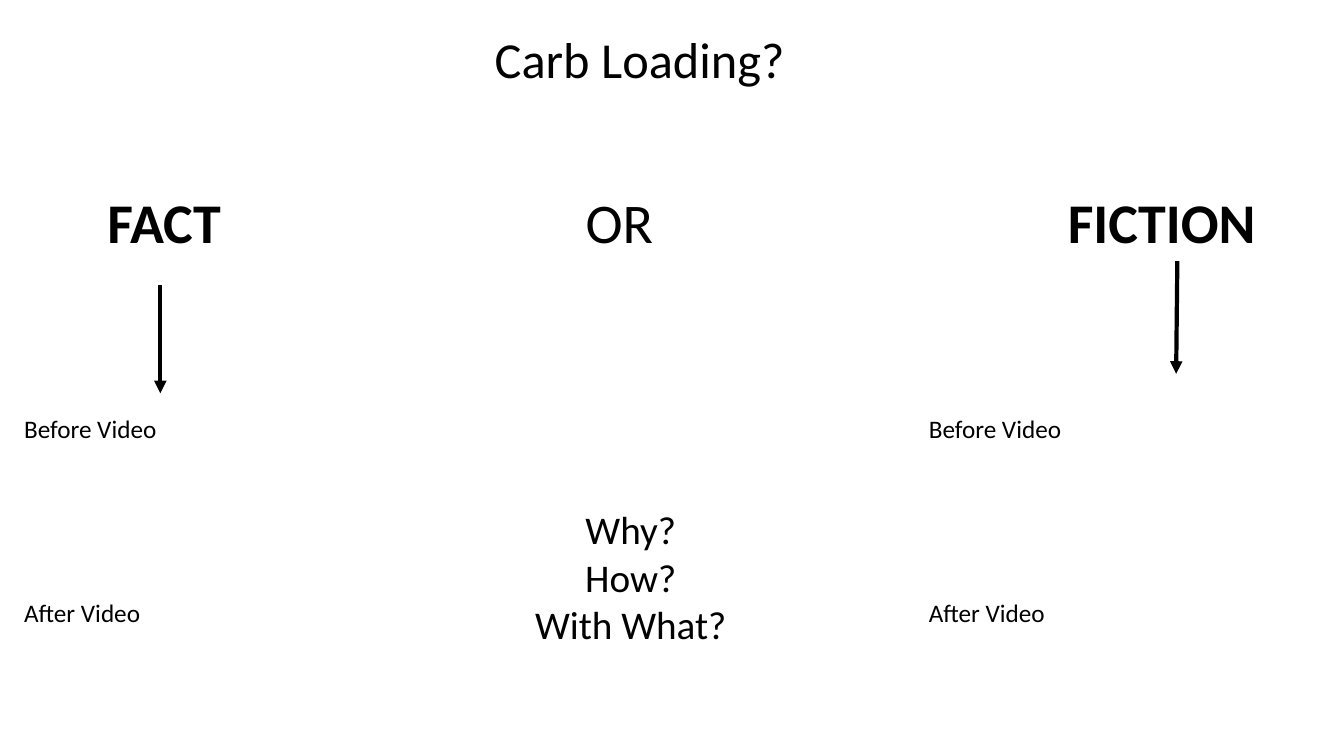
import pptx
import pptx.dml.color
import pptx.enum.shapes
import pptx.enum.text
import pptx.oxml.ns
import pptx.util
from lxml import etree
from pptx.util import Cm

BLACK = pptx.dml.color.RGBColor(0, 0, 0)
LEFT = pptx.enum.text.PP_ALIGN.LEFT
CENTER = pptx.enum.text.PP_ALIGN.CENTER
qn = pptx.oxml.ns.qn


def style(run, size, bold=False):
    font = run.font
    font.name = "Calibri"
    font.size = pptx.util.Pt(size)
    font.bold = bold
    font.color.rgb = BLACK


def add_box(slide, left, top, width, height):
    box = slide.shapes.add_textbox(Cm(left), Cm(top), Cm(width), Cm(height))
    frame = box.text_frame
    frame.word_wrap = True
    frame.auto_size = pptx.enum.text.MSO_AUTO_SIZE.SHAPE_TO_FIT_TEXT
    return frame


def add_lines(slide, place, lines, size, align=LEFT, gap=0):
    """Write one paragraph per line, with gap points between them."""
    frame = add_box(slide, *place)
    frame.text = "\n".join(lines)
    for index, para in enumerate(frame.paragraphs):
        para.alignment = align
        para.space_before = pptx.util.Pt(gap if index else 0)
        for run in para.runs:
            style(run, size)


def add_choice(slide, place, parts, stops, size):
    """Write (text, bold) parts on one line, spread by tab stops."""
    para = add_box(slide, *place).paragraphs[0]
    for text, bold in parts:
        run = para.add_run()
        run.text = text
        style(run, size, bold)
    para.alignment = LEFT
    tabs = etree.SubElement(para._p.get_or_add_pPr(), qn("a:tabLst"))
    for stop in stops:
        etree.SubElement(tabs, qn("a:tab"), pos=str(Cm(stop)), algn="l")


def add_arrow(slide, x1, y1, x2, y2):
    arrow = slide.shapes.add_connector(
        pptx.enum.shapes.MSO_CONNECTOR.STRAIGHT, Cm(x1), Cm(y1), Cm(x2), Cm(y2))
    arrow.line.color.rgb = BLACK
    arrow.line.width = pptx.util.Pt(3)
    etree.SubElement(arrow.line._get_or_add_ln(), qn("a:tailEnd"), type="triangle")
    etree.SubElement(arrow._element.spPr, qn("a:effectLst"))


def main():
    deck = pptx.Presentation()
    deck.slide_width, deck.slide_height = Cm(33.87), Cm(19.05)
    slide = deck.slides.add_slide(deck.slide_layouts[6])

    add_lines(slide, (2.84, 0.58, 26.85, 1.8), ["Carb Loading? "], 36, CENTER)
    add_choice(slide, (2.46, 4.6, 29.74, 1.96),
               [("FACT", True), ("\tOR\t", False), ("FICTION", True)],
               (12.05, 24.2), 40)
    add_arrow(slide, 4.04, 7.19, 4.04, 9.91)
    add_arrow(slide, 29.67, 6.58, 29.64, 9.42)
    add_lines(slide, (12.95, 12.62, 5.89, 3.84),
              ["Why?", "How?", "With What?"], 28, CENTER)
    for left, width in ((0.36, 4.19), (23.16, 6.48)):
        add_lines(slide, (left, 10.29, width, 5.64),
                  ["Before Video", "After Video"], 18, gap=110)

    deck.save("out.pptx")


if __name__ == "__main__":
    main()
